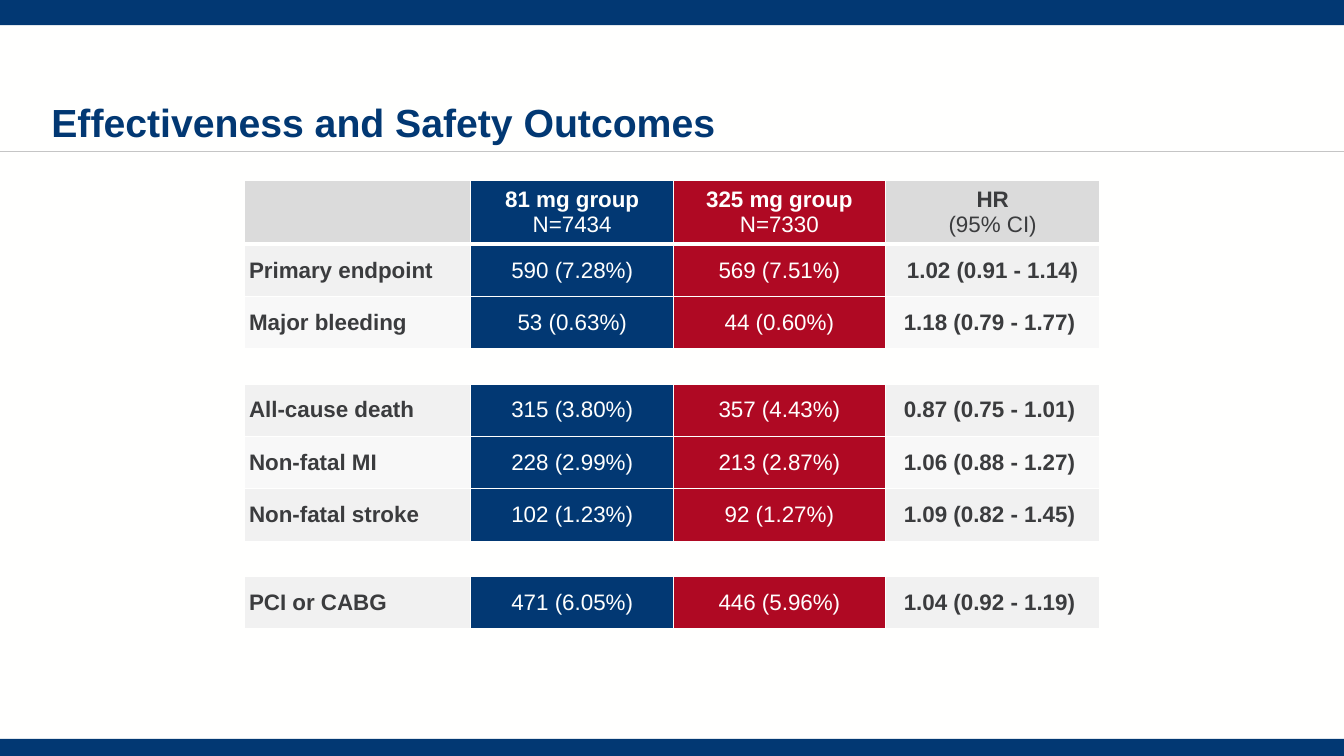
from lxml.etree import SubElement
from pptx import Presentation
from pptx.dml.color import RGBColor
from pptx.enum.shapes import MSO_CONNECTOR, MSO_SHAPE
from pptx.enum.text import MSO_ANCHOR, PP_ALIGN
from pptx.oxml.ns import qn
from pptx.util import Inches, Pt

COLORS = {
    "paper": "FFFFFE", "navy": "023873", "red": "AF0923", "ink": "3B3C3E",
    "rule": "C5C5C5", "header": "DBDBDB", "odd": "F1F1F1", "even": "F8F8F8",
}
FONT = "Arial"
SLIDE_WIDTH, SLIDE_HEIGHT = 13.33, 7.5
TABLE_LEFT = 2.42
COLUMN_WIDTHS = [2.25, 2.01, 2.1, 2.13]
HEADER_HEIGHT, ROW_HEIGHT = 0.55, 0.52

HEADINGS = [(), ("81 mg group", "N=7434"), ("325 mg group", "N=7330"), ("HR", "(95% CI)")]
MAIN_OUTCOMES = [
    ("Primary endpoint", "590 (7.28%)", "569 (7.51%)", "1.02 (0.91 - 1.14)"),
    ("Major bleeding", "53 (0.63%)", "44 (0.60%)", "1.18 (0.79 - 1.77) "),
]
EVENT_OUTCOMES = [
    ("All-cause death", "315 (3.80%)", "357 (4.43%)", "0.87 (0.75 - 1.01) "),
    ("Non-fatal MI", "228 (2.99%)", "213 (2.87%)", "1.06 (0.88 - 1.27) "),
    ("Non-fatal stroke", "102 (1.23%)", "92 (1.27%)", "1.09 (0.82 - 1.45) "),
]
PROCEDURE_OUTCOMES = [
    ("PCI or CABG", "471 (6.05%)", "446 (5.96%)", "1.04 (0.92 - 1.19) "),
]


def rgb(name):
    """Return a named colour from the palette."""
    return RGBColor.from_string(COLORS[name])


def add_run(paragraph, text, size, color, bold):
    """Append one styled run to a paragraph."""
    run = paragraph.add_run()
    run.text = text
    run.font.name = FONT
    run.font.size = Pt(size)
    run.font.bold = bold
    run.font.color.rgb = rgb(color)


def add_band(slide, top, height):
    """Draw a full-width navy band."""
    band = slide.shapes.add_shape(
        MSO_SHAPE.RECTANGLE, 0, Inches(top), Inches(SLIDE_WIDTH), Inches(height))
    band.shadow.inherit = False
    band.fill.solid()
    band.fill.fore_color.rgb = rgb("navy")
    band.line.fill.background()


def add_rule(slide, top):
    """Draw the thin full-width line under the title."""
    rule = slide.shapes.add_connector(
        MSO_CONNECTOR.STRAIGHT, 0, Inches(top), Inches(SLIDE_WIDTH), Inches(top))
    rule.line.color.rgb = rgb("rule")
    rule.line.width = Pt(0.75)
    SubElement(rule._element.spPr, qn("a:effectLst"))


def add_title(slide, text):
    """Place the bottom-anchored slide title."""
    frame = slide.shapes.add_textbox(
        Inches(0.51), Inches(0.2), Inches(11.14), Inches(1.25)).text_frame
    frame.word_wrap = True
    frame.vertical_anchor = MSO_ANCHOR.BOTTOM
    frame.margin_left = frame.margin_right = frame.margin_top = frame.margin_bottom = 0
    frame.paragraphs[0].line_spacing = 0.9
    add_run(frame.paragraphs[0], text, 28, "navy", True)


def set_borders(cell, top, bottom):
    """Give a cell paper-coloured borders, with top and bottom widths in points."""
    properties = cell._tc.get_or_add_tcPr()
    for side, width in {"lnL": 1, "lnR": 1, "lnT": top, "lnB": bottom}.items():
        border = SubElement(properties, qn(f"a:{side}"), w=str(Pt(width)))
        fill = SubElement(border, qn("a:solidFill"))
        SubElement(fill, qn("a:srgbClr"), val=COLORS["paper"])


def fill_cell(cell, lines, column, shade, top=1, bottom=1):
    """Style one cell and write its lines as (text, bold) pairs."""
    set_borders(cell, top, bottom)
    cell.fill.solid()
    cell.fill.fore_color.rgb = rgb({1: "navy", 2: "red"}.get(column, shade))
    cell.vertical_anchor = MSO_ANCHOR.MIDDLE
    color = "paper" if column in (1, 2) else "ink"
    for index, (text, bold) in enumerate(lines):
        frame = cell.text_frame
        paragraph = frame.add_paragraph() if index else frame.paragraphs[0]
        paragraph.alignment = PP_ALIGN.CENTER if column else PP_ALIGN.LEFT
        add_run(paragraph, text, 16, color, bold)


def add_outcomes(slide, top, outcomes, headings=()):
    """Add one block of outcome rows, with a heading row if given."""
    heights = [HEADER_HEIGHT] * bool(headings) + [ROW_HEIGHT] * len(outcomes)
    table = slide.shapes.add_table(
        len(heights), len(COLUMN_WIDTHS), Inches(TABLE_LEFT), Inches(top),
        Inches(sum(COLUMN_WIDTHS)), Inches(sum(heights))).table
    table.first_row = table.horz_banding = False
    for table_column, width in zip(table.columns, COLUMN_WIDTHS):
        table_column.width = Inches(width)
    for table_row, height in zip(table.rows, heights):
        table_row.height = Inches(height)

    for column, heading in enumerate(headings):
        lines = [(text, index == 0) for index, text in enumerate(heading)]
        fill_cell(table.cell(0, column), lines, column, "header", bottom=3)

    for index, outcome in enumerate(outcomes):
        shade = "even" if index % 2 else "odd"
        edge = 3 if headings and index == 0 else 1
        for column, text in enumerate(outcome):
            cell = table.cell(index + bool(headings), column)
            cell.margin_left = cell.margin_right = Inches(0.05)
            cell.margin_top = cell.margin_bottom = 0
            fill_cell(cell, [(text, column in (0, 3))], column, shade, top=edge)


def main():
    """Build the outcomes slide and save it."""
    deck = Presentation()
    deck.slide_width, deck.slide_height = Inches(SLIDE_WIDTH), Inches(SLIDE_HEIGHT)
    slide = deck.slides.add_slide(deck.slide_layouts[6])
    slide.background.fill.solid()
    slide.background.fill.fore_color.rgb = rgb("paper")

    add_rule(slide, 1.5)
    add_band(slide, 0, 0.25)
    add_band(slide, 7.33, 0.17)
    add_title(slide, "Effectiveness and Safety Outcomes")
    add_outcomes(slide, 1.79, MAIN_OUTCOMES, HEADINGS)
    add_outcomes(slide, 3.81, EVENT_OUTCOMES)
    add_outcomes(slide, 5.72, PROCEDURE_OUTCOMES)
    deck.save("out.pptx")


if __name__ == "__main__":
    main()
